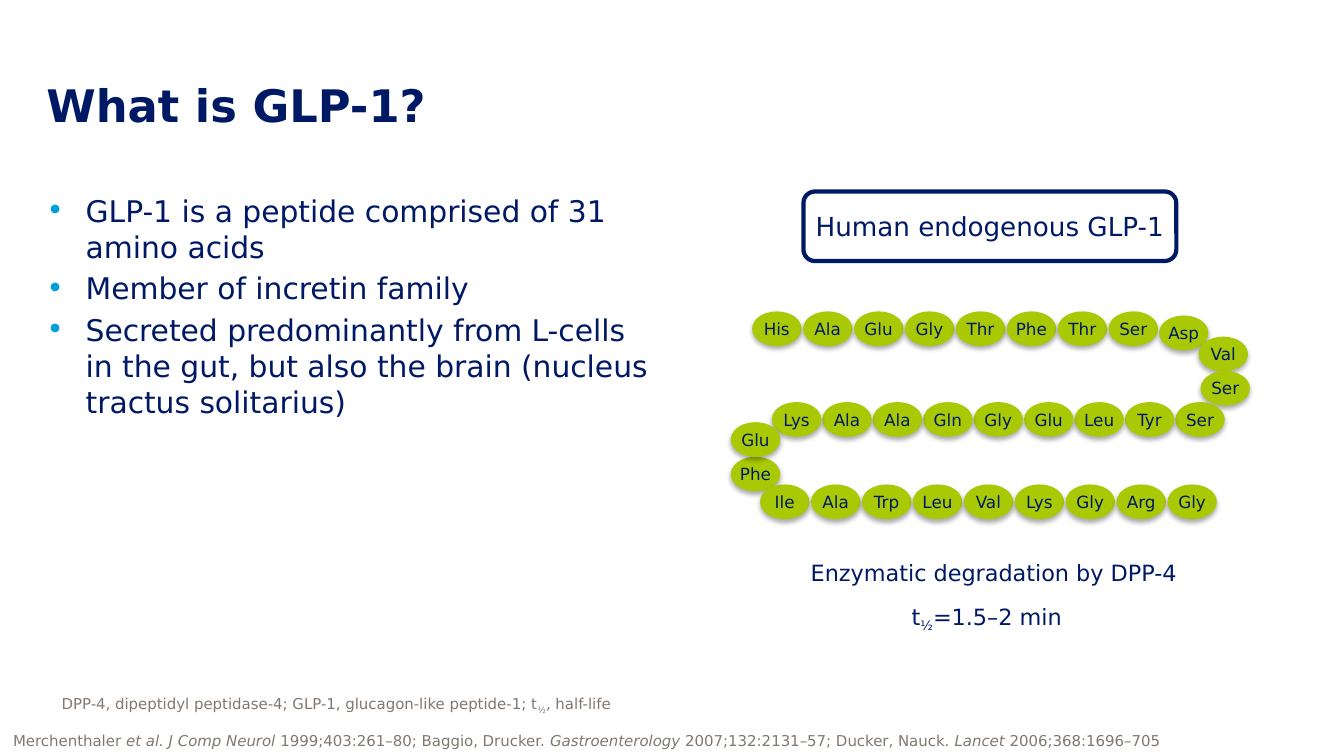
from collections import namedtuple
from dataclasses import dataclass

from lxml.etree import SubElement
from pptx import Presentation
from pptx.dml.color import RGBColor
from pptx.enum.shapes import MSO_SHAPE
from pptx.enum.text import MSO_ANCHOR, MSO_AUTO_SIZE, PP_ALIGN
from pptx.oxml.ns import qn
from pptx.util import Inches, Pt


@dataclass(frozen=True)
class Theme:
    font: str = "DejaVu Sans"
    navy: str = "001965"
    grey: str = "82786F"
    cyan: str = "009FDA"
    green: str = "A8C903"
    white: str = "FFFFFF"
    title: float = 32
    body: float = 21.3
    label: float = 18.7
    caption: float = 16
    bead: float = 12
    note: float = 10.7


T = Theme()
Box = namedtuple("Box", "x y w h")
W, H = Inches(13.333), Inches(7.5)
PAD = (0.13, 0.07)


def share(x, y, w, h):
    """Box from percentages of the slide's width and height."""
    return Box(*(int(v * side / 100) for v, side in zip((x, y, w, h), (W, H, W, H))))


def sub_box(box, x, y, w, h):
    """Box from shares of another box."""
    return Box(int(box.x + x * box.w), int(box.y + y * box.h), int(w * box.w), int(h * box.h))


def place(sp, box):
    sp.left, sp.top, sp.width, sp.height = box


def set_frame(tf, pad=PAD, anchor=MSO_ANCHOR.TOP, wrap=True, fit=MSO_AUTO_SIZE.NONE):
    tf.margin_left = tf.margin_right = Inches(pad[0])
    tf.margin_top = tf.margin_bottom = Inches(pad[1])
    tf.vertical_anchor, tf.word_wrap, tf.auto_size = anchor, wrap, fit


def write(p, text, size, color=T.navy, bold=False, align=PP_ALIGN.LEFT):
    """Fill a paragraph; *stars* enclose italics and ½ is set as a subscript."""
    p.alignment = align
    for i, part in enumerate(text.split("*")):
        for j, piece in enumerate(part.replace("½", "|½|").split("|")):
            if not piece:
                continue
            r = p.add_run()
            r.text = piece
            r.font.name, r.font.size, r.font.bold = T.font, Pt(size), bold
            r.font.color.rgb = RGBColor.from_string(color)
            r.font.italic = i % 2 == 1
            if j % 2:
                r._r.get_or_add_rPr().set("baseline", "-25000")


def add_bullet(p, color, indent):
    pPr = p._p.get_or_add_pPr()
    pPr.set("marL", str(indent))
    pPr.set("indent", str(-indent))
    SubElement(SubElement(pPr, qn("a:buClr")), qn("a:srgbClr"), val=color)
    SubElement(pPr, qn("a:buFont"), typeface=T.font)
    SubElement(pPr, qn("a:buChar"), char="•")


def add_text(shapes, box, text, size, anchor=MSO_ANCHOR.TOP, wrap=True, **fmt):
    tf = shapes.add_textbox(*box).text_frame
    set_frame(tf, anchor=anchor, wrap=wrap, fit=MSO_AUTO_SIZE.SHAPE_TO_FIT_TEXT)
    write(tf.paragraphs[0], text, size, **fmt)


def add_labelled_shape(shapes, kind, box, text, size, fill, line=None):
    sp = shapes.add_shape(kind, *box)
    sp.fill.solid()
    sp.fill.fore_color.rgb = RGBColor.from_string(fill)
    if line:
        sp.line.color.rgb = RGBColor.from_string(line)
        sp.line.width = Pt(3)
    else:
        sp.line.fill.background()
    sp.shadow.inherit = False
    set_frame(sp.text_frame, anchor=MSO_ANCHOR.MIDDLE, wrap=False)
    write(sp.text_frame.paragraphs[0], text, size, align=PP_ALIGN.CENTER)
    return sp


def add_soft_shadow(sp):
    effects = sp._element.spPr.find(qn("a:effectLst"))
    shadow = SubElement(effects, qn("a:outerShdw"), blurRad=str(Pt(3.5)), dist=str(Pt(2.2)),
                        dir="5400000", algn="ctr", rotWithShape="0")
    SubElement(SubElement(shadow, qn("a:srgbClr"), val="000000"), qn("a:alpha"), val="32000")


# Title
def title_region(slide, box, text):
    sp = slide.shapes.title
    place(sp, box)
    set_frame(sp.text_frame, pad=(0, 0), anchor=MSO_ANCHOR.MIDDLE)
    write(sp.text_frame.paragraphs[0], text, T.title, bold=True)


# Bullet list
def list_region(slide, box, items):
    sp = slide.placeholders[1]
    place(sp, box)
    tf = sp.text_frame
    set_frame(tf, pad=(0, 0))
    for i, item in enumerate(items):
        p = tf.add_paragraph() if i else tf.paragraphs[0]
        add_bullet(p, T.cyan, Inches(0.39))
        p.space_before = Pt(0.2 * T.body if i else 0)
        write(p, item, T.body)


# Peptide chain: strands of beads on a grid of 10.5 columns by 6 rows
def chain_region(slide, box, strands):
    group = slide.shapes.add_group_shape()
    col, row = 1 / 10.5, 1 / 6
    for names, x, y, dx, dy in strands:
        for i, name in enumerate(names.split()):
            bead = sub_box(box, (x + i * dx) * col, (y + i * dy) * row, col, row)
            add_soft_shadow(add_labelled_shape(group.shapes, MSO_SHAPE.OVAL, bead, name,
                                               T.bead, T.green))


# Captions under the chain
def caption_region(slide, box, degradation, half_life):
    add_text(slide.shapes, sub_box(box, 0.12, 0.52, 0.73, 0.48), half_life, T.caption,
             align=PP_ALIGN.CENTER)
    add_text(slide.shapes, sub_box(box, 0, 0, 1, 0.48), degradation, T.caption,
             align=PP_ALIGN.CENTER)


# Abbreviations and references
def footnote_region(slide, box, abbreviations, references):
    add_text(slide.shapes, sub_box(box, 0, 0.52, 1, 0.48), references, T.note,
             color=T.grey, wrap=False)
    add_text(slide.shapes, sub_box(box, 0.04, 0, 0.96, 0.48), abbreviations, T.note,
             color=T.grey, anchor=MSO_ANCHOR.BOTTOM)


def main():
    prs = Presentation()
    prs.slide_width, prs.slide_height = W, H
    slide = prs.slides.add_slide(prs.slide_layouts[1])

    title_region(slide, share(3.45, 10, 93.08, 7.6), "What is GLP-1?")
    list_region(slide, share(3.45, 25.47, 44.78, 57.47), [
        "GLP-1 is a peptide comprised of 31 amino acids",
        "Member of incretin family",
        "Secreted predominantly from L-cells in the gut, but also the brain "
        "(nucleus tractus solitarius)",
    ])
    footnote_region(
        slide, share(0, 91.2, 90.23, 8.94),
        "DPP-4, dipeptidyl peptidase-4; GLP-1, glucagon-like peptide-1; t½, half-life",
        "Merchenthaler *et al. J Comp Neurol* 1999;403:261–80; Baggio, Drucker. "
        "*Gastroenterology* 2007;132:2131–57; Ducker, Nauck. *Lancet* 2006;368:1696–705")
    caption_region(slide, share(56.4, 73.07, 35.1, 11.07),
                   "Enzymatic degradation by DPP-4", "t½=1.5–2 min")
    add_labelled_shape(slide.shapes, MSO_SHAPE.FLOWCHART_ALTERNATE_PROCESS,
                       share(59.78, 25.33, 27.75, 9.2), "Human endogenous GLP-1",
                       T.label, T.white, line=T.navy)
    # Each strand: residues, first column and row, step in columns and rows
    chain_region(slide, share(54.38, 41.2, 38.63, 27.47), [
        ("His Ala Glu Gly Thr Phe Thr Ser", 0.43, 0, 1.03, 0),
        ("Asp", 8.66, 0.12, 0, 0),
        ("Val Ser", 9.46, 0.73, 0.04, 0.99),
        ("Ser Tyr Leu Glu Gly Gln Ala Ala Lys", 8.99, 2.62, -1.02, 0),
        ("Phe Glu", 0, 4.2, 0, -1),
        ("Ile Ala Trp Leu Val Lys Gly Arg Gly", 0.59, 5, 1.03, 0),
    ])
    prs.save("out.pptx")


if __name__ == "__main__":
    main()
